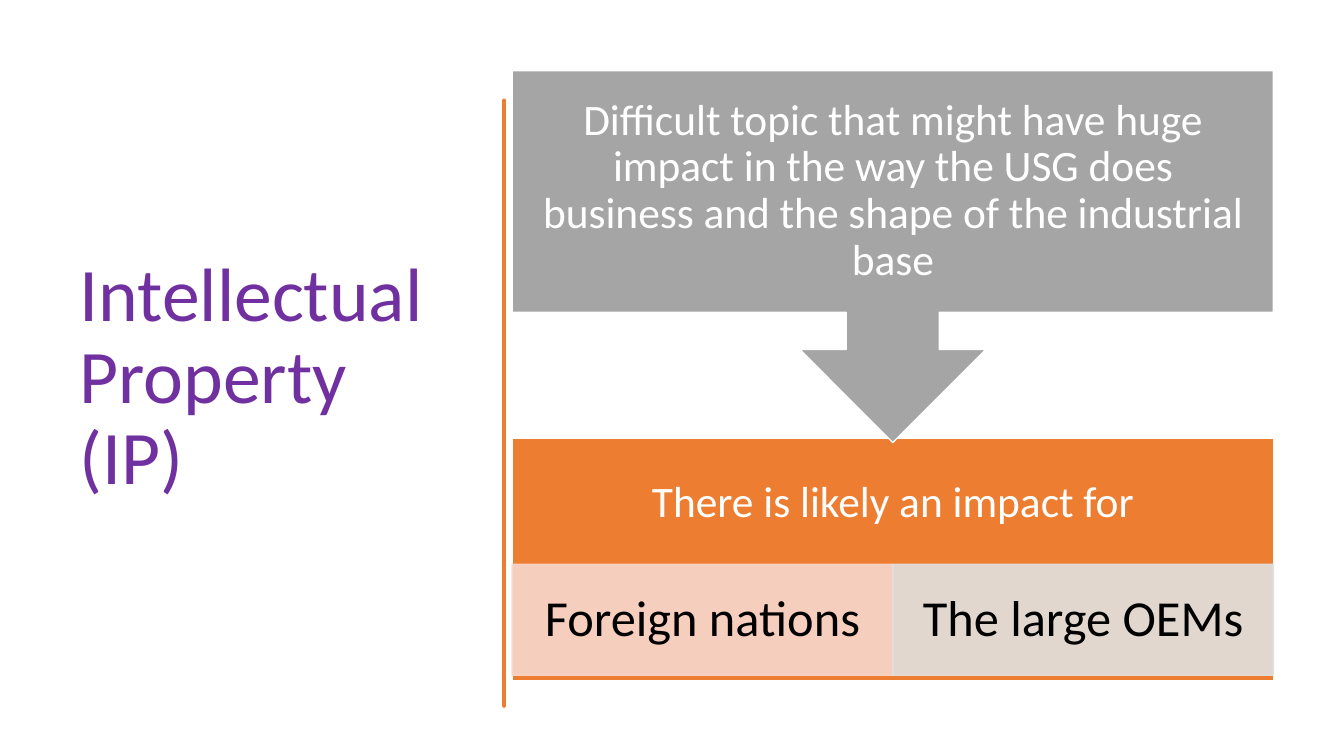
from lxml import etree
from pptx import Presentation
from pptx.dml.color import RGBColor
from pptx.enum.shapes import MSO_SHAPE
from pptx.enum.text import MSO_ANCHOR, MSO_AUTO_SIZE, PP_ALIGN
from pptx.oxml.ns import qn
from pptx.util import Inches, Pt

RECT, CALLOUT = MSO_SHAPE.RECTANGLE, MSO_SHAPE.DOWN_ARROW_CALLOUT
LEFT, CENTER = PP_ALIGN.LEFT, PP_ALIGN.CENTER
ORANGE, GRAY, WHITE = "ED7D31", "A5A5A5", "FFFFFF"


def write(sp, text, size, color, align=CENTER, insets=(0.24, 0.24, 0.24, 0.24)):
    """Fill a shape with one formatted paragraph; insets run left, top, right, bottom."""
    tf = sp.text_frame
    tf.word_wrap = True
    tf.auto_size = MSO_AUTO_SIZE.NONE
    tf.vertical_anchor = MSO_ANCHOR.MIDDLE
    tf.margin_left, tf.margin_top, tf.margin_right, tf.margin_bottom = map(Inches, insets)
    p = tf.paragraphs[0]
    p.alignment = align
    p.line_spacing = 0.9
    r = p.add_run()
    r.text = text
    r.font.name = "Calibri"
    r.font.size = Pt(size)
    r.font.color.rgb = RGBColor.from_string(color)


def paint(sp, fill, line, width=1, alpha=None):
    """Set fill and outline, with an optional opacity in percent."""
    sp.shadow.inherit = False
    sp.fill.solid()
    sp.fill.fore_color.rgb = RGBColor.from_string(fill)
    sp.line.color.rgb = RGBColor.from_string(line)
    sp.line.width = Pt(width)
    if alpha:
        for clr in sp._element.spPr.iter(qn("a:srgbClr")):
            etree.SubElement(clr, qn("a:alpha"), val=str(alpha * 1000))


prs = Presentation()
prs.slide_width, prs.slide_height = Inches(13.33), Inches(7.5)
s = prs.slides.add_slide(prs.slide_layouts[5])

# Title
title = s.shapes.title
title.left, title.top, title.width, title.height = map(Inches, (0.69, 0.7, 4.03, 6.11))
write(title, "Intellectual Property (IP)", 54, "7030A0", LEFT, (0.1, 0.05, 0.3, 0.05))

# Hand-drawn divider: each curve has an end y and two sideways pulls on its edge
right_edge = [(1.46, 0.02, 0.02), (2.26, -0.02, 0.01), (2.94, -0.01, 0),
              (3.56, -0.01, 0.02), (4.36, -0.02, 0.04), (5.1, -0.04, -0.03),
              (5.84, 0.02, 0.02), (6.76, -0.02, 0.01)]
left_edge = [(6.13, 0.01, -0.02), (5.57, 0.01, 0.01), (4.77, -0.01, 0),
             (4.15, 0, -0.02), (3.35, 0.01, -0.01), (2.5, 0.01, -0.01),
             (1.81, 0.01, 0.02), (0.84, -0.03, 0.04)]
STEPS = 8
points = []
for x, y, edge in ((4.75, 0.84, right_edge), (4.73, 6.76, left_edge)):
    points.append((x, y))
    for end, pull1, pull2 in edge:
        for i in range(1, STEPS + 1):
            t = i / STEPS
            bend = 3 * t * (1 - t) * (pull1 * (1 - t) + pull2 * t)
            points.append((x + bend, y + (end - y) * t))
        y = end
builder = s.shapes.build_freeform(*points[0], scale=Inches(1))
builder.add_line_segments(points[1:], close=True)
divider = builder.convert_to_shape()
paint(divider, ORANGE, ORANGE, 3.25)
divider.line._get_or_add_ln().append(etree.Element(qn("a:round")))

# Impact block, its heading in the upper part
impact = s.shapes.add_shape(RECT, *map(Inches, (5.08, 4.35, 7.55, 2.4)))
paint(impact, ORANGE, WHITE)
write(impact, "There is likely an impact for", 31, WHITE, insets=(0.24, 0.24, 0.24, 1.35))

# Affected parties
parties = [("Foreign nations", "F8D7CE"), ("The large OEMs", "E1E1E1")]
for i, (name, color) in enumerate(parties):
    sp = s.shapes.add_shape(RECT, *map(Inches, (5.08 + i * 3.775, 5.6, 3.775, 1.1)))
    paint(sp, color, color, alpha=90)
    write(sp, name, 36, "000000", insets=(0.28, 0.05, 0.28, 0.05))

# Topic callout pointing down to the impact block
topic = s.shapes.add_shape(CALLOUT, *map(Inches, (5.08, 0.7, 7.55, 3.69)))
paint(topic, GRAY, WHITE)
write(topic, "Difficult topic that might have huge impact in the way the USG does "
      "business and the shape of the industrial base", 31, WHITE)

prs.save("out.pptx")
